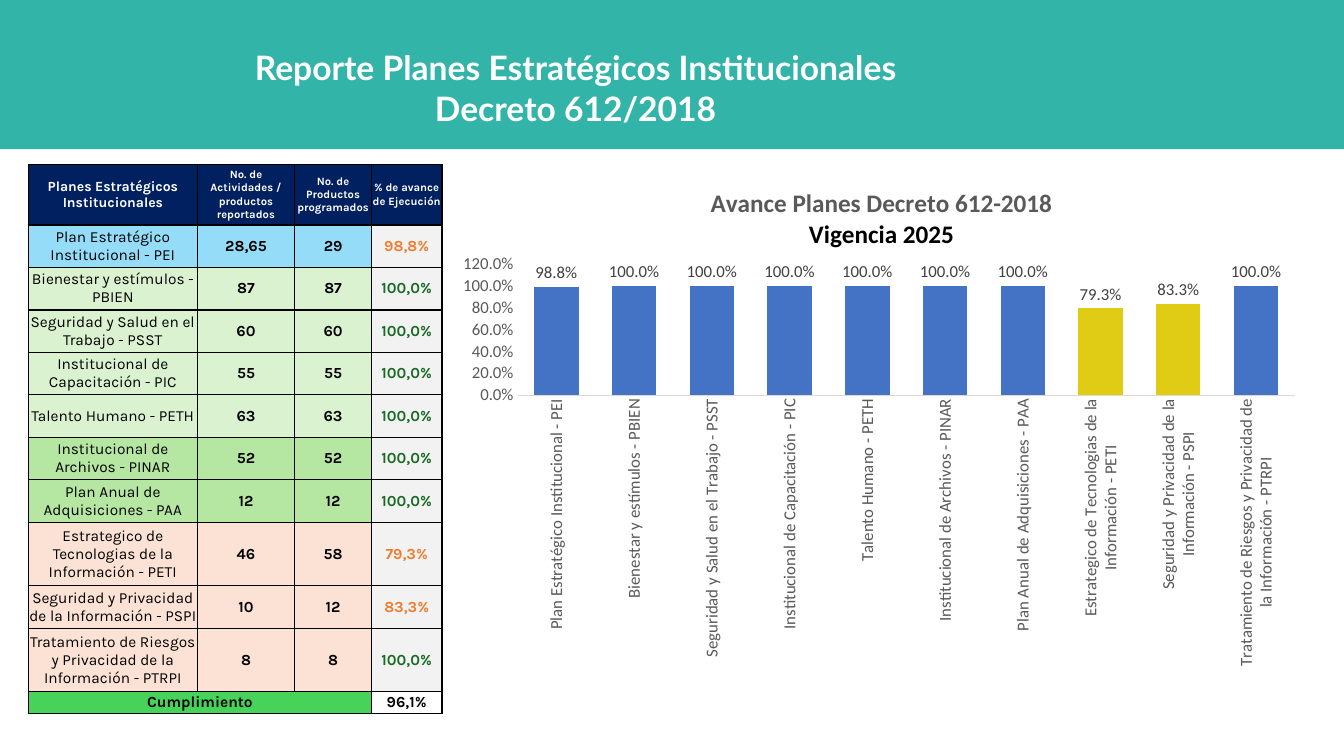
from lxml import etree
from pptx import Presentation
from pptx.chart.data import CategoryChartData
from pptx.dml.color import RGBColor
from pptx.enum.chart import XL_CHART_TYPE, XL_LABEL_POSITION, XL_TICK_MARK
from pptx.enum.shapes import MSO_SHAPE
from pptx.enum.text import MSO_ANCHOR, PP_ALIGN
from pptx.oxml import parse_xml
from pptx.oxml.ns import qn
from pptx.util import Cm, Pt

CENTER = PP_ALIGN.CENTER
MIDDLE = MSO_ANCHOR.MIDDLE
RECT = MSO_SHAPE.RECTANGLE
COLUMN = XL_CHART_TYPE.COLUMN_CLUSTERED
OUTER = XL_LABEL_POSITION.OUTSIDE_END
NO_TICK = XL_TICK_MARK.NONE

TITLE = "Reporte Planes Estratégicos Institucionales Decreto 612/2018"
HEADS = [
    ("Planes Estratégicos Institucionales", 10),
    ("No. de Actividades / productos reportados", 8),
    ("No. de Productos programados", 8),
    ("% de avance de Ejecución", 8),
]
BLUE, MINT, GREEN, PEACH = "94DCF8", "DAF2D0", "B5E6A2", "FBE2D5"
TWO, THREE = 1.07, 1.6
PLANS = [
    ("Plan Estratégico Institucional - PEI", "28,65", "29", 0.988, BLUE, TWO),
    ("Bienestar y estímulos - PBIEN", "87", "87", 1, MINT, TWO),
    ("Seguridad y Salud en el Trabajo - PSST", "60", "60", 1, MINT, TWO),
    ("Institucional de Capacitación - PIC", "55", "55", 1, MINT, TWO),
    ("Talento Humano - PETH", "63", "63", 1, MINT, TWO),
    ("Institucional de Archivos - PINAR", "52", "52", 1, GREEN, TWO),
    ("Plan Anual de Adquisiciones - PAA", "12", "12", 1, GREEN, TWO),
    ("Estrategico de Tecnologias de la Información - PETI", "46", "58", 0.793, PEACH, THREE),
    ("Seguridad y Privacidad de la Información - PSPI", "10", "12", 0.833, PEACH, TWO),
    ("Tratamiento de Riesgos y Privacidad de la Información - PTRPI", "8", "8", 1, PEACH, THREE),
]
TOTAL = ("Cumplimiento", "96,1%")
WIDTHS = [4.25, 2.46, 1.93, 1.78]
HEIGHTS = [1.52] + [plan[5] for plan in PLANS] + [0.54]
CAPTION = [("Avance Planes Decreto 612-2018", "595959"), ("Vigencia 2025", "000000")]
LIMIT = 39
DRAWING = "http://schemas.openxmlformats.org/drawingml/2006/main"
CHART = "http://schemas.openxmlformats.org/drawingml/2006/chart"


def color(code):
    return RGBColor.from_string(code)


def style(font, face, size, code, bold=False):
    font.name, font.size, font.bold = face, Pt(size), bold
    font.color.rgb = color(code)


def paint(item, code):
    item.fill.solid()
    item.fill.fore_color.rgb = color(code)


def write(para, text, face, size, code, bold=True):
    para.alignment = CENTER
    run = para.add_run()
    run.text = text
    style(run.font, face, size, code, bold)


def fold(name):
    if len(name) <= LIMIT:
        return name
    cut = name.rfind(" ", 0, LIMIT + 1)
    return name[:cut] + "\n" + name[cut + 1:]


def border(cell):
    props = cell._tc.get_or_add_tcPr()
    for side in "LRTB":
        props.append(parse_xml(
            f'<a:ln{side} xmlns:a="{DRAWING}" w="12700"><a:solidFill>'
            f'<a:srgbClr val="000000"/></a:solidFill></a:ln{side}>'))


def put(cell, text, size, code, hue, bold=True):
    cell.margin_left = cell.margin_right = cell.margin_top = cell.margin_bottom = 0
    cell.vertical_anchor = MIDDLE
    paint(cell, hue)
    write(cell.text_frame.paragraphs[0], text, "Karla", size, code, bold)


def place(node, after, **parts):
    """Give a chart part a fixed place, as shares of the chart."""
    for old in node.findall(qn("c:layout")):
        node.remove(old)
    layout = etree.Element(qn("c:layout"))
    manual = etree.SubElement(layout, qn("c:manualLayout"))
    for key, value in parts.items():
        etree.SubElement(manual, qn("c:" + key)).set("val", str(value))
    if after is None:
        node.insert(0, layout)
    else:
        after.addnext(layout)


def add_head(slide):
    band = slide.shapes.add_shape(RECT, 0, 0, Cm(33.87), Cm(3.76))
    band.shadow.inherit = False
    paint(band, "32B4A8")
    band.line.fill.background()
    box = slide.shapes.add_textbox(Cm(4.88), Cm(1.07), Cm(19.25), Cm(2.31))
    box.text_frame.word_wrap = True
    write(box.text_frame.paragraphs[0], TITLE, "Lato", 24, "FFFFFF")


def add_grid(slide):
    frame = slide.shapes.add_table(len(HEIGHTS), len(WIDTHS), Cm(0.72), Cm(4.15),
                                   Cm(sum(WIDTHS)), Cm(sum(HEIGHTS)))
    grid = frame.table
    grid.first_row = grid.horz_banding = False
    for col, width in zip(grid.columns, WIDTHS):
        col.width = Cm(width)
    for row, height in zip(grid.rows, HEIGHTS):
        row.height = Cm(height)
    for cell in grid.iter_cells():
        border(cell)
    for col, (text, size) in enumerate(HEADS):
        put(grid.cell(0, col), text, size, "FFFFFF", "002060")
    for row, (name, done, goal, rate, hue, _) in enumerate(PLANS, 1):
        put(grid.cell(row, 0), name, 11, "000000", hue, False)
        put(grid.cell(row, 1), done, 11, "000000", hue)
        put(grid.cell(row, 2), goal, 11, "000000", hue)
        tone = "196B24" if rate == 1 else "ED7D31"
        put(grid.cell(row, 3), f"{rate:.1%}".replace(".", ","), 11, tone, "F2F2F2")
    last = len(HEIGHTS) - 1
    grid.cell(last, 0).merge(grid.cell(last, 2))
    put(grid.cell(last, 0), TOTAL[0], 11, "000000", "47D359")
    put(grid.cell(last, 3), TOTAL[1], 11, "000000", "FFFFFF")


def add_bars(slide):
    data = CategoryChartData(number_format="0.0%")
    data.categories = [fold(plan[0]) for plan in PLANS]
    data.add_series("Avance", [plan[3] for plan in PLANS])
    chart = slide.shapes.add_chart(COLUMN, Cm(11.3), Cm(4.24), Cm(21.77), Cm(12.7), data).chart
    style(chart.font, "Calibri", 12, "000000")
    chart.has_legend = False
    title = chart.chart_title
    paras = title.text_frame
    for index, (text, code) in enumerate(CAPTION):
        para = paras.add_paragraph() if index else paras.paragraphs[0]
        write(para, text, "Calibri", 18, code)
    title.include_in_layout = False
    node = title._element
    place(node, node.find(qn("c:tx")), xMode="edge", yMode="edge", x=0.3, y=0.03)
    area = chart._chartSpace.find(f".//{{{CHART}}}plotArea")
    place(area, None, layoutTarget="inner", xMode="edge", yMode="edge",
          x=0.08, y=0.19, w=0.9, h=0.26)

    for axis in (chart.category_axis, chart.value_axis):
        axis.major_tick_mark = axis.minor_tick_mark = NO_TICK
        axis.has_major_gridlines = False
        style(axis.tick_labels.font, "Calibri", 12, "595959")
    names, scale = chart.category_axis, chart.value_axis
    names.format.line.color.rgb = color("D9D9D9")
    names.format.line.width = Pt(0.75)
    names._element.find(qn("c:txPr")).find(qn("a:bodyPr")).set("rot", "-5400000")
    scale.format.line.fill.background()
    scale.minimum_scale, scale.maximum_scale, scale.major_unit = 0, 1.2, 0.2
    scale.tick_labels.number_format = "0.0%"
    scale.tick_labels.number_format_is_linked = False

    plot = chart.plots[0]
    plot.gap_width, plot.vary_by_categories = 75, False
    bars = plot.series[0]
    paint(bars.format, "4472C4")
    for index, plan in enumerate(PLANS):
        if plan[3] < 0.9:
            paint(bars.points[index].format, "E0CB15")
    labels = bars.data_labels
    labels.show_value, labels.position = True, OUTER
    labels.number_format, labels.number_format_is_linked = "0.0%", False
    style(labels.font, "Calibri", 12, "404040")


def main():
    deck = Presentation()
    deck.slide_width, deck.slide_height = Cm(33.87), Cm(19.05)
    slide = deck.slides.add_slide(deck.slide_layouts[6])
    add_head(slide)
    add_grid(slide)
    add_bars(slide)
    deck.save("out.pptx")


if __name__ == "__main__":
    main()
